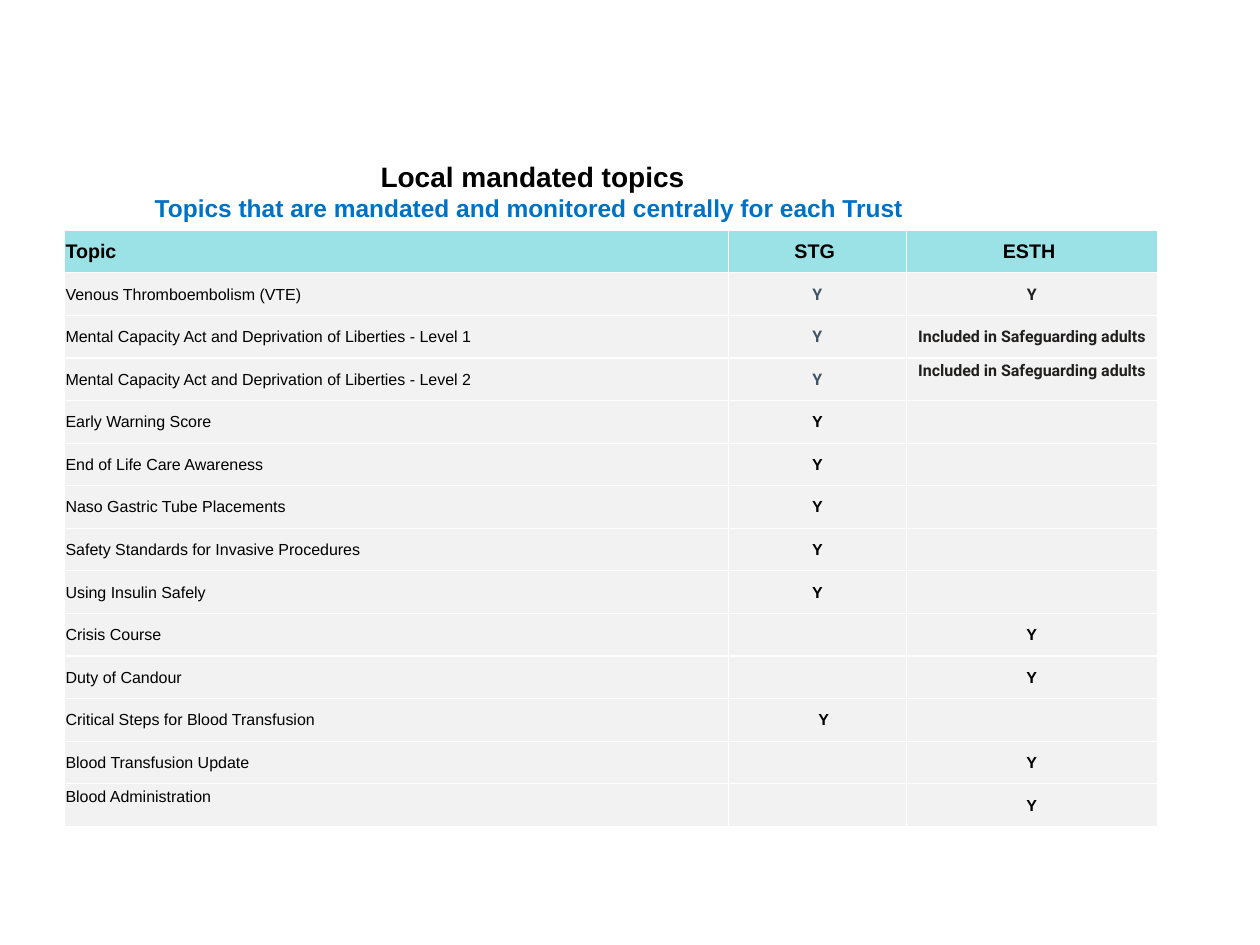
import pptx
import pptx.util
import pptx.dml.color
import pptx.enum.text
import pptx.oxml
import pptx.oxml.ns

SLIDE_WIDTH, SLIDE_HEIGHT = 14.22, 10.67
BLACK, SLATE, CHARCOAL = "000000", "425563", "201F1E"
HEADER_FILL, BODY_FILL, BORDER = "9AE2E6", "F2F2F2", "FFFFFF"

HEADING = [
    ("Local mandated topics", 22.8, BLACK),
    ("Topics that are mandated and monitored centrally for each Trust ", 19.9, "0072C6"),
]
INCLUDED = "Included in Safeguarding adults"
TOPICS = [
    ("Topic", "STG ", "ESTH "),
    ("Venous Thromboembolism (VTE)", "Y", "Y"),
    ("Mental Capacity Act and Deprivation of Liberties - Level 1", "Y", INCLUDED),
    ("Mental Capacity Act and Deprivation of Liberties - Level 2", "Y", INCLUDED),
    ("Early Warning Score", "Y", ""),
    ("End of Life Care Awareness", "Y", ""),
    ("Naso Gastric Tube Placements", "Y", ""),
    ("Safety Standards for Invasive Procedures", "Y", ""),
    ("Using Insulin Safely", "Y", ""),
    ("Crisis Course", "", "Y"),
    ("Duty of Candour", "", "Y"),
    ("Critical Steps for Blood Transfusion", "Y", ""),
    ("Blood Transfusion Update", "", "Y"),
    ("Blood Administration", "", "Y"),
]
ROBOTO_ROWS = range(1, 4)
ROBOTO_COLORS = {1: SLATE, 2: CHARCOAL}
RAISED_CELLS = {(3, 2), (13, 0)}
INDENTED_CELL = (11, 1)
COLUMN_WIDTHS = [7.49, 2.01, 2.83]
TABLE_LEFT, TABLE_TOP, TABLE_HEIGHT = 0.73, 2.6, 6.73

inches = pptx.util.Inches
ALIGN = pptx.enum.text.PP_ALIGN
MIDDLE = pptx.enum.text.MSO_ANCHOR.MIDDLE


def rgb(color):
    return pptx.dml.color.RGBColor.from_string(color)


def format_paragraph(paragraph, size, color, bold, align, typeface="Arial"):
    paragraph.alignment = align
    paragraph.font.size = pptx.util.Pt(size)
    paragraph.font.name = typeface
    paragraph.font.bold = bold
    paragraph.font.color.rgb = rgb(color)


def add_borders(cell):
    properties = cell._tc.get_or_add_tcPr()
    for position, side in enumerate(("lnL", "lnR", "lnT", "lnB")):
        properties.insert(position, pptx.oxml.parse_xml(
            f'<a:{side} {pptx.oxml.ns.nsdecls("a")} w="12700"><a:solidFill>'
            f'<a:srgbClr val="{BORDER}"/></a:solidFill></a:{side}>'))


def add_heading(slide):
    heading = slide.shapes.title
    heading.left, heading.top = inches(0.57), inches(1.75)
    heading.width, heading.height = inches(10.88), inches(0.82)
    frame = heading.text_frame
    frame.vertical_anchor = MIDDLE
    frame.auto_size = pptx.enum.text.MSO_AUTO_SIZE.NONE
    for index, (text, size, color) in enumerate(HEADING):
        line = frame.add_paragraph() if index else frame.paragraphs[0]
        line.text = text
        format_paragraph(line, size, color, True, ALIGN.CENTER)


def fill_cell(cell, row, column, text):
    cell.fill.solid()
    cell.fill.fore_color.rgb = rgb(BODY_FILL if row else HEADER_FILL)
    add_borders(cell)
    cell.vertical_anchor = MIDDLE
    cell.margin_top = cell.margin_right = inches(0.01)
    cell.margin_left = inches(0.15 if (row, column) == INDENTED_CELL else 0.01)
    cell.margin_bottom = inches(0.2 if (row, column) in RAISED_CELLS else 0)
    cell.text = text
    in_roboto = row in ROBOTO_ROWS and column > 0
    format_paragraph(
        cell.text_frame.paragraphs[0],
        size=13 if row else 16,
        color=ROBOTO_COLORS[column] if in_roboto else BLACK,
        bold=row == 0 or column > 0,
        align=ALIGN.CENTER if column else ALIGN.LEFT,
        typeface="Roboto" if in_roboto else "Arial")


def add_topics(slide):
    topics = slide.shapes.add_table(
        len(TOPICS), len(COLUMN_WIDTHS), inches(TABLE_LEFT), inches(TABLE_TOP),
        inches(sum(COLUMN_WIDTHS)), inches(TABLE_HEIGHT)).table
    topics.horz_banding = False
    for column, width in zip(topics.columns, COLUMN_WIDTHS):
        column.width = inches(width)
    for row, entries in enumerate(TOPICS):
        for column, text in enumerate(entries):
            fill_cell(topics.cell(row, column), row, column, text)


def main():
    presentation = pptx.Presentation()
    presentation.slide_width = inches(SLIDE_WIDTH)
    presentation.slide_height = inches(SLIDE_HEIGHT)
    slide = presentation.slides.add_slide(presentation.slide_layouts[5])
    add_heading(slide)
    add_topics(slide)
    presentation.save("out.pptx")


if __name__ == "__main__":
    main()
